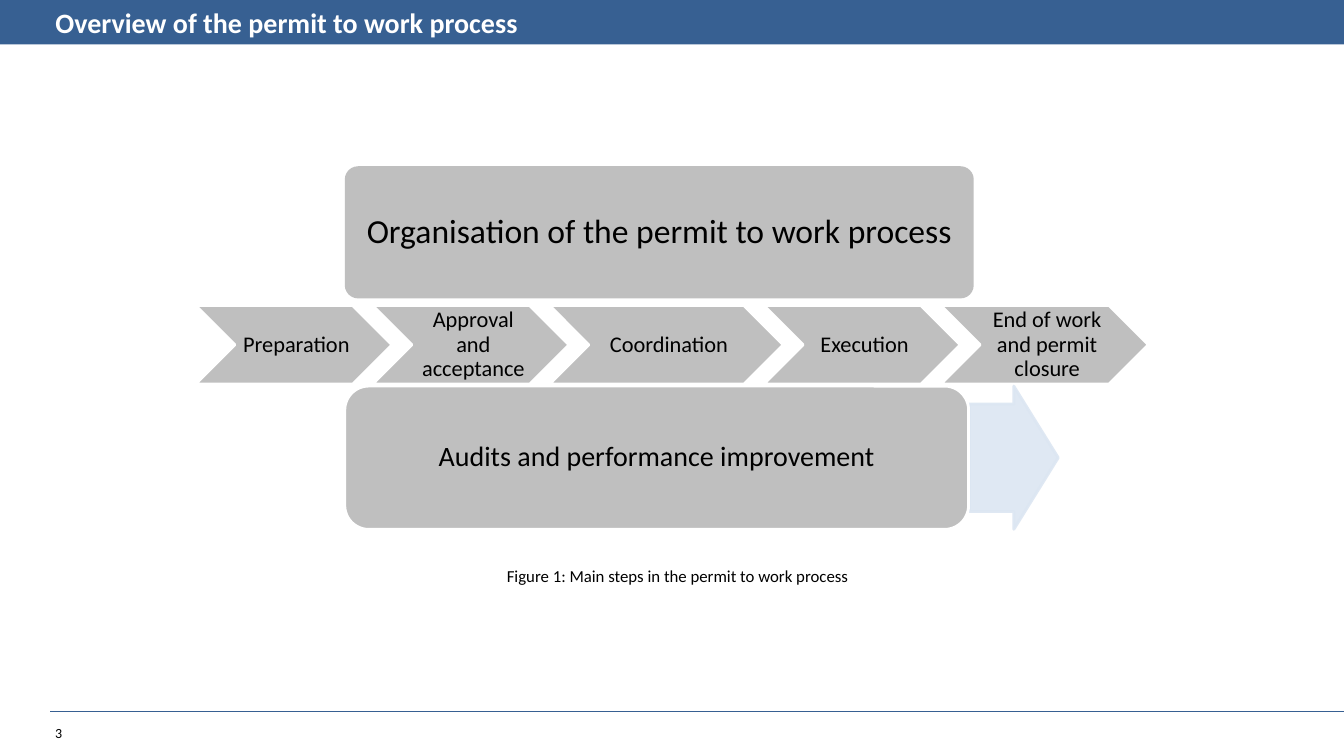
"""Build the permit to work overview slide."""
from lxml.etree import SubElement
from pptx import Presentation
from pptx.dml.color import RGBColor
from pptx.enum.shapes import MSO_CONNECTOR, MSO_SHAPE
from pptx.enum.text import MSO_ANCHOR, MSO_AUTO_SIZE, PP_ALIGN
from pptx.oxml.ns import qn
from pptx.util import Cm, Pt

HEADING = "Overview of the permit to work process"
ORGANISATION = "Organisation of the permit to work process"
STEPS = [
    ("Preparation", 4.95),
    ("Approval and acceptance", 4.95),
    ("Coordination", 5.89),
    ("Execution", 4.95),
    ("End of work and permit closure", 5.23),
]
AUDITS = "Audits and performance improvement"
CAPTION = "Figure 1: Main steps in the permit to work process"
PAGE_NUMBER = "3"

COLORS = {"band": "376092", "box": "BFBFBF", "arrow": "DCE6F2",
          "paper": "FFFFFF", "ink": "000000"}
FONT = "Calibri"
PAGE_WIDTH, PAGE_HEIGHT = 33.87, 19.05
BAND_HEIGHT = 1.12
MARGIN = 1.14
BOX_LEFT = 8.69
STEP_LEFT, STEP_TOP, STEP_HEIGHT, STEP_OVERLAP = 4.93, 7.7, 1.98, 0.49
AUDIT_TOP, AUDIT_HEIGHT = 9.73, 3.61
OUTLINE = Pt(2)


def color(name):
    return RGBColor.from_string(COLORS[name])


def write(frame, text, size, ink="ink", align=PP_ALIGN.CENTER, bold=False, spacing=None):
    frame.word_wrap = True
    paragraph = frame.paragraphs[0]
    paragraph.alignment = align
    paragraph.line_spacing = spacing
    run = paragraph.add_run()
    run.text = text
    run.font.name = FONT
    run.font.size = Pt(size)
    run.font.bold = bold
    run.font.color.rgb = color(ink)


def set_insets(frame, left, top, right, bottom):
    frame.margin_left, frame.margin_top = Cm(left), Cm(top)
    frame.margin_right, frame.margin_bottom = Cm(right), Cm(bottom)


def add_block(slide, kind, box, fill, outline=None):
    block = slide.shapes.add_shape(kind, *map(Cm, box))
    block.shadow.inherit = False
    block.fill.solid()
    block.fill.fore_color.rgb = color(fill)
    if outline:
        block.line.color.rgb = color(outline)
        block.line.width = OUTLINE
    else:
        block.line.fill.background()
    return block


def label(block, text, size, insets):
    frame = block.text_frame
    frame.vertical_anchor = MSO_ANCHOR.MIDDLE
    set_insets(frame, *insets)
    write(frame, text, size, spacing=0.9)


def add_note(slide, box, text, size, align):
    note = slide.shapes.add_textbox(*map(Cm, box))
    write(note.text_frame, text, size, align=align)


def add_frame(slide):
    rule = slide.shapes.add_connector(
        MSO_CONNECTOR.STRAIGHT, Cm(1.27), Cm(17.93), Cm(PAGE_WIDTH), Cm(17.93))
    rule.line.color.rgb = color("band")
    rule.line.width = Pt(0.75)
    SubElement(rule.element.spPr, qn("a:effectLst"))
    add_note(slide, (MARGIN, 18.14, 1.8, 0.69), PAGE_NUMBER, 10, PP_ALIGN.LEFT)
    add_block(slide, MSO_SHAPE.RECTANGLE, (0, 0, PAGE_WIDTH, BAND_HEIGHT), "band")

    heading = slide.shapes.title
    heading.left, heading.top = Cm(MARGIN), Cm(0)
    heading.width, heading.height = Cm(19.61), Cm(BAND_HEIGHT)
    slide.shapes.element.append(heading.element)
    frame = heading.text_frame
    frame.auto_size = MSO_AUTO_SIZE.NONE
    frame.vertical_anchor = MSO_ANCHOR.MIDDLE
    write(frame, HEADING, 20, "paper", PP_ALIGN.LEFT, bold=True)


def add_process(slide):
    organisation = add_block(
        slide, MSO_SHAPE.ROUNDED_RECTANGLE, (BOX_LEFT, 4.19, 15.85, 3.33), "box")
    organisation.adjustments[0] = 0.1
    label(organisation, ORGANISATION, 24, (0.03, 0.03, 0.03, 0.03))

    left = STEP_LEFT
    for name, width in STEPS:
        step = add_block(slide, MSO_SHAPE.CHEVRON,
                         (left, STEP_TOP, width, STEP_HEIGHT), "box", "paper")
        label(step, name, 16, (0.18, 0.05, 0.05, 0.05))
        left += width - STEP_OVERLAP

    arrow = add_block(slide, MSO_SHAPE.RIGHT_ARROW,
                      (24.43, AUDIT_TOP, 2.24, AUDIT_HEIGHT), "arrow", "arrow")
    arrow.adjustments[0], arrow.adjustments[1] = 0.75, 0.5
    for tint in arrow.element.spPr.iter(qn("a:srgbClr")):
        SubElement(tint, qn("a:alpha"), val="90000")

    audits = add_block(slide, MSO_SHAPE.ROUNDED_RECTANGLE,
                       (BOX_LEFT, AUDIT_TOP, 15.72, AUDIT_HEIGHT), "box", "paper")
    label(audits, AUDITS, 20, (0.2, 0.1, 0.2, 0.1))
    add_note(slide, (8.61, 14.12, 16.94, 0.8), CAPTION, 12, PP_ALIGN.CENTER)


def main():
    deck = Presentation()
    deck.slide_width, deck.slide_height = Cm(PAGE_WIDTH), Cm(PAGE_HEIGHT)
    slide = deck.slides.add_slide(deck.slide_layouts[5])
    add_frame(slide)
    add_process(slide)
    deck.save("out.pptx")


if __name__ == "__main__":
    main()
